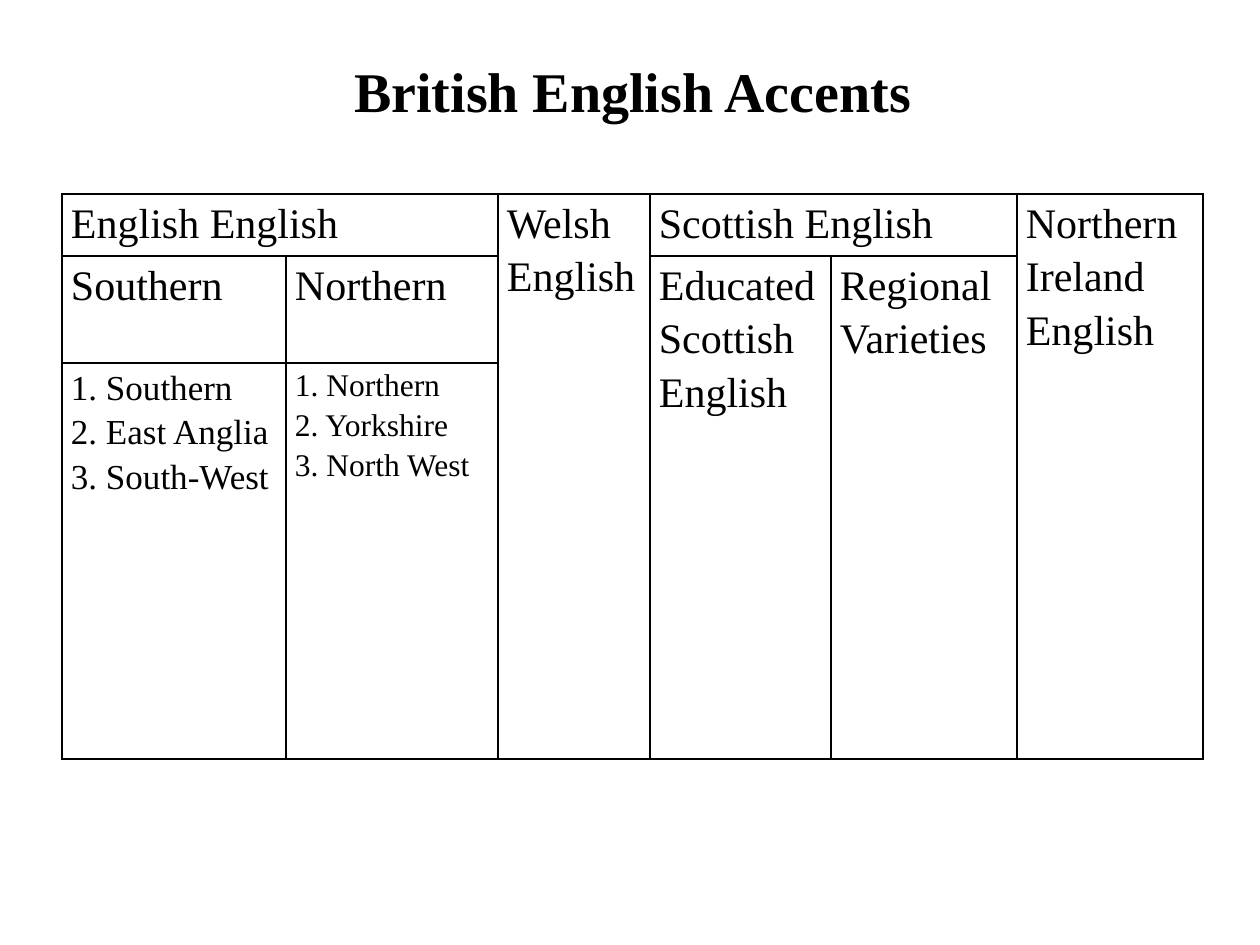
from lxml import etree
from pptx import Presentation
from pptx.dml.color import RGBColor
from pptx.enum.text import MSO_ANCHOR, PP_ALIGN
from pptx.oxml.ns import qn
from pptx.util import Pt

PX = 914400 / 126
FONT = "Times New Roman"
COLORS = {"ink": "000000"}
TOP = MSO_ANCHOR.TOP
LEFT, CENTER, JUSTIFY = PP_ALIGN.LEFT, PP_ALIGN.CENTER, PP_ALIGN.JUSTIFY

COLUMNS = [224, 212, 152, 181, 186, 186]
ROWS = [62, 107, 396]
# row, column, rows spanned, columns spanned, size, alignment, lines
ACCENTS = [
    (0, 0, 1, 2, 24, JUSTIFY, ["English English"]),
    (0, 2, 3, 1, 24, JUSTIFY, ["Welsh English"]),
    (0, 3, 1, 2, 24, JUSTIFY, ["Scottish English"]),
    (0, 5, 3, 1, 24, JUSTIFY, ["Northern Ireland English"]),
    (1, 0, 1, 1, 24, JUSTIFY, ["Southern"]),
    (1, 1, 1, 1, 24, JUSTIFY, ["Northern"]),
    (1, 3, 2, 1, 24, JUSTIFY, ["Educated Scottish English"]),
    (1, 4, 2, 1, 24, JUSTIFY, ["Regional Varieties"]),
    (2, 0, 1, 1, 20, LEFT, ["1. Southern", "2. East Anglia", "3. South-West"]),
    (2, 1, 1, 1, 18, LEFT, ["1. Northern", "2. Yorkshire", "3. North West"]),
]


def px(n):
    return round(n * PX)


def set_all(obj, values):
    for name, value in values.items():
        setattr(obj, name, value)


def write_lines(tf, lines, size, align, spacing=1.0, bold=False):
    for i, line in enumerate(lines):
        p = tf.paragraphs[0] if i == 0 else tf.add_paragraph()
        set_all(p, {"alignment": align, "line_spacing": spacing})
        r = p.add_run()
        r.text = line
        set_all(r.font, {"name": FONT, "size": Pt(size), "bold": bold})
        r.font.color.rgb = RGBColor.from_string(COLORS["ink"])


def add_title(s, text):
    tf = s.shapes.add_textbox(px(339), px(48), px(588), px(118)).text_frame
    set_all(tf, {"word_wrap": False, "vertical_anchor": TOP, "margin_top": px(8)})
    write_lines(tf, [text], 32, CENTER, bold=True)


def outline_cell(cell):
    tc_pr = cell._tc.get_or_add_tcPr()
    for side in ("lnL", "lnR", "lnT", "lnB"):
        ln = etree.SubElement(tc_pr, qn(f"a:{side}"), w=str(Pt(1)))
        fill = etree.SubElement(ln, qn("a:solidFill"))
        etree.SubElement(fill, qn("a:srgbClr"), val=COLORS["ink"])
    cell.fill.background()


def add_accent_table(s):
    frame = s.shapes.add_table(len(ROWS), len(COLUMNS), px(62), px(194),
                               px(sum(COLUMNS)), px(sum(ROWS)))
    table = frame.table
    set_all(table, {"first_row": False, "horz_banding": False})
    for column, width in zip(table.columns, COLUMNS):
        column.width = px(width)
    for row, height in zip(table.rows, ROWS):
        row.height = px(height)
    for cell in table.iter_cells():
        set_all(cell, {"margin_left": px(9), "margin_right": px(9),
                       "margin_top": 0, "margin_bottom": 0})
        outline_cell(cell)
    for row, col, down, across, size, align, lines in ACCENTS:
        cell = table.cell(row, col)
        if down * across > 1:
            cell.merge(table.cell(row + down - 1, col + across - 1))
        write_lines(cell.text_frame, lines, size, align, spacing=1.15)


def main():
    prs = Presentation()
    set_all(prs, {"slide_width": px(1260), "slide_height": px(945)})
    s = prs.slides.add_slide(prs.slide_layouts[6])
    add_accent_table(s)
    add_title(s, "British English Accents")
    prs.save("out.pptx")


if __name__ == "__main__":
    main()
